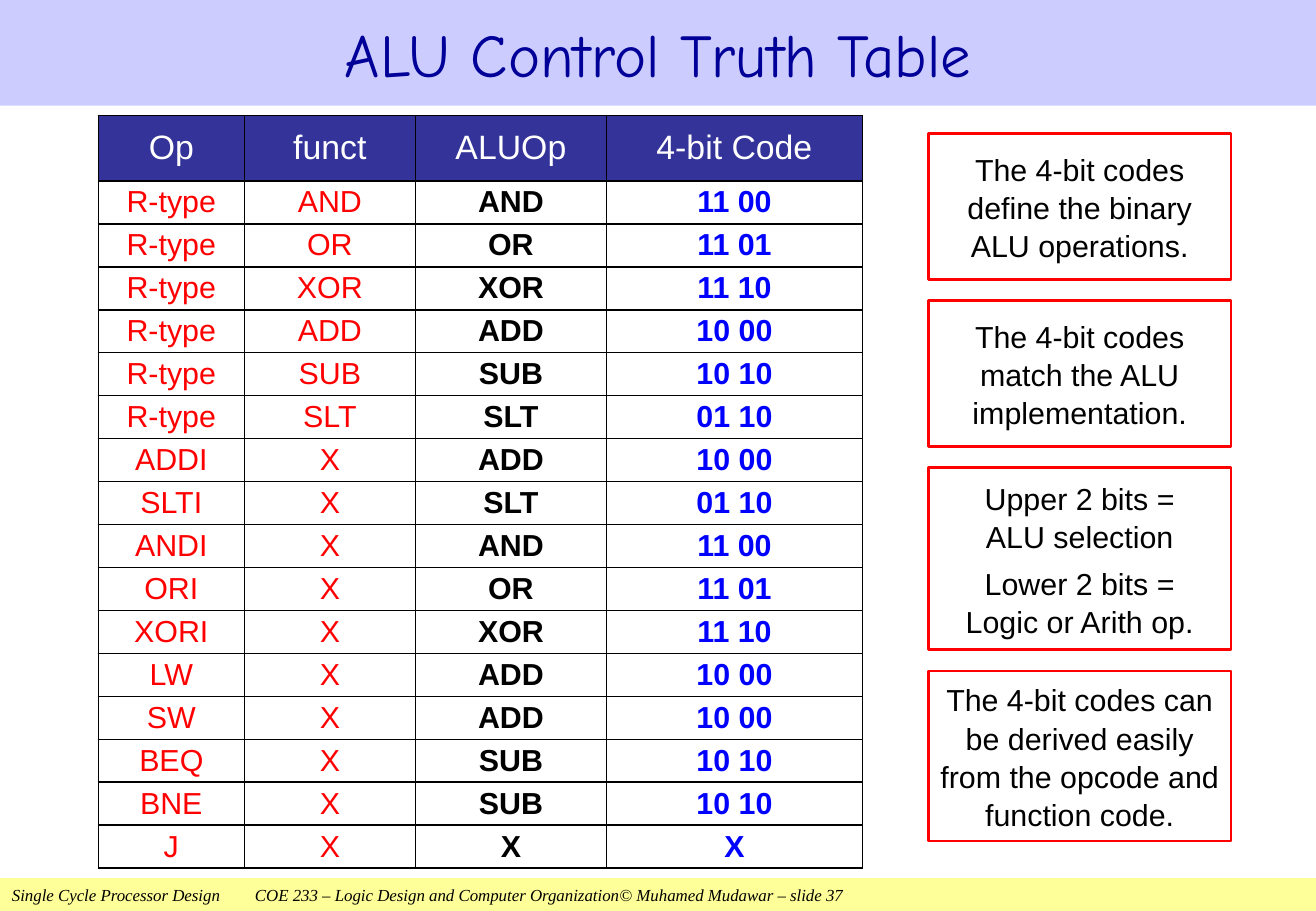
from lxml import etree
from pptx import Presentation
from pptx.dml.color import RGBColor
from pptx.enum.shapes import MSO_SHAPE
from pptx.enum.text import MSO_ANCHOR, MSO_AUTO_SIZE, PP_ALIGN
from pptx.oxml.ns import qn
from pptx.util import Inches, Pt

RECTANGLE = MSO_SHAPE.RECTANGLE
MIDDLE = MSO_ANCHOR.MIDDLE
NO_AUTOFIT = MSO_AUTO_SIZE.NONE
CENTER, LEFT = PP_ALIGN.CENTER, PP_ALIGN.LEFT

COLUMNS, ROWS = 108.3, 75
COLORS = {
    "title band": "CCCCFF",
    "title": "000099",
    "footer band": "FFFF99",
    "header": "333399",
    "white": "FFFFFF",
    "black": "000000",
    "red": "FF0000",
    "blue": "0000FF",
}

HEADINGS = ("Op", "funct", "ALUOp", "4-bit Code")
COLUMN_WIDTHS = (12, 14.1, 15.7, 21.1)
CODES = {
    "AND": "11 00",
    "OR": "11 01",
    "XOR": "11 10",
    "ADD": "10 00",
    "SUB": "10 10",
    "SLT": "01 10",
    "X": "X",
}
R_TYPE_FUNCTIONS = ("AND", "OR", "XOR", "ADD", "SUB", "SLT")
OTHER_OPERATIONS = {
    "ADDI": "ADD",
    "SLTI": "SLT",
    "ANDI": "AND",
    "ORI": "OR",
    "XORI": "XOR",
    "LW": "ADD",
    "SW": "ADD",
    "BEQ": "SUB",
    "BNE": "SUB",
    "J": "X",
}
NOTES = (
    (12, ("The 4-bit codes define the binary ALU operations.",)),
    (12, ("The 4-bit codes match the ALU implementation.",)),
    (15, ("Upper 2 bits =", "ALU selection", "Lower 2 bits =", "Logic or Arith op.")),
    (14, ("The 4-bit codes can be derived easily from the opcode and function code.",)),
)
NOTE_GAP = 1.75
FOOTER = (
    "Single Cycle Processor Design",
    "COE 233 – Logic Design and Computer Organization",
    "© Muhamed Mudawar – slide 37",
)


def color(name):
    return RGBColor.from_string(COLORS[name])


class SlideBuilder:
    def __init__(self, presentation):
        self.column = presentation.slide_width / COLUMNS
        self.row = presentation.slide_height / ROWS
        self.slide = presentation.slides.add_slide(presentation.slide_layouts[5])

    def box(self, left, top, width, height):
        return (
            round(left * self.column),
            round(top * self.row),
            round(width * self.column),
            round(height * self.row),
        )

    def style(self, paragraph, size, name, font="Arial", bold=False, italic=False,
              alignment=CENTER):
        paragraph.alignment = alignment
        paragraph.font.size = Pt(size)
        paragraph.font.name = font
        paragraph.font.bold = bold
        paragraph.font.italic = italic
        paragraph.font.color.rgb = color(name)

    def title(self, text, height):
        shape = self.slide.shapes.title
        shape.left, shape.top, shape.width, shape.height = self.box(0, 0, COLUMNS, height)
        shape.fill.solid()
        shape.fill.fore_color.rgb = color("title band")
        frame = shape.text_frame
        frame.text = text
        frame.auto_size = NO_AUTOFIT
        frame.vertical_anchor = MIDDLE
        self.style(frame.paragraphs[0], 36, "title", "Comic Neue")

    def rectangle(self, left, top, width, height, lines):
        shape = self.slide.shapes.add_shape(RECTANGLE, *self.box(left, top, width, height))
        shape.shadow.inherit = False
        frame = shape.text_frame
        frame.text = "\n".join(lines)
        frame.word_wrap = True
        frame.vertical_anchor = MIDDLE
        frame.margin_top = frame.margin_bottom = 0
        return shape

    def footer(self, parts, top):
        shape = self.rectangle(0, top, COLUMNS, ROWS - top, ["\t".join(parts)])
        shape.fill.solid()
        shape.fill.fore_color.rgb = color("footer band")
        shape.line.fill.background()
        self.style(shape.text_frame.paragraphs[0], 10, "black", "Times New Roman",
                   italic=True, alignment=LEFT)

    def note(self, left, top, width, height, lines):
        shape = self.rectangle(left, top, width, height, lines)
        shape.fill.background()
        shape.line.color.rgb = color("red")
        shape.line.width = Pt(1.5)
        frame = shape.text_frame
        frame.margin_left = frame.margin_right = Inches(0.08)
        for index, paragraph in enumerate(frame.paragraphs):
            self.style(paragraph, 18, "black")
            paragraph.line_spacing = 1.05
            paragraph.space_before = Pt(5 if index == 2 else 0)

    def border(self, cell):
        properties = cell._tc.get_or_add_tcPr()
        for side in ("a:lnL", "a:lnR", "a:lnT", "a:lnB"):
            line = etree.SubElement(properties, qn(side), w=str(Pt(1)))
            fill = etree.SubElement(line, qn("a:solidFill"))
            etree.SubElement(fill, qn("a:srgbClr"), val=COLORS["black"])

    def cell(self, cell, text, size, name, bold):
        cell.text = text
        cell.vertical_anchor = MIDDLE
        cell.margin_left = cell.margin_right = Inches(0.03)
        cell.margin_top = cell.margin_bottom = Inches(0.02)
        self.style(cell.text_frame.paragraphs[0], size, name, bold=bold)
        self.border(cell)

    def table(self, left, top, height, header_height, records):
        box = self.box(left, top, sum(COLUMN_WIDTHS), height)
        table = self.slide.shapes.add_table(len(records) + 1, len(HEADINGS), *box).table
        table.first_row = table.horz_banding = False
        for column, width in zip(table.columns, COLUMN_WIDTHS):
            column.width = round(width * self.column)
        body_height = (height - header_height) / len(records)
        for index, row in enumerate(table.rows):
            row.height = round((body_height if index else header_height) * self.row)
        for index, heading in enumerate(HEADINGS):
            cell = table.cell(0, index)
            self.cell(cell, heading, 20, "white", False)
            cell.fill.solid()
            cell.fill.fore_color.rgb = color("header")
        styles = (("red", False), ("red", False), ("black", True), ("blue", True))
        for row, record in enumerate(records, 1):
            for index, (text, (name, bold)) in enumerate(zip(record, styles)):
                cell = table.cell(row, index)
                self.cell(cell, text, 18, name, bold)
                cell.fill.background()


def main():
    presentation = Presentation()
    presentation.slide_width = Inches(10.83)
    presentation.slide_height = Inches(7.5)
    builder = SlideBuilder(presentation)
    builder.title("ALU Control Truth Table", 8.7)
    builder.footer(FOOTER, 72.3)
    records = [("R-type", name, name, CODES[name]) for name in R_TYPE_FUNCTIONS]
    records += [(op, "X", name, CODES[name]) for op, name in OTHER_OPERATIONS.items()]
    builder.table(8.1, 9.5, 62, 5.4, records)
    top = 11
    for height, lines in NOTES:
        builder.note(76.4, top, 24.9, height, lines)
        top += height + NOTE_GAP
    presentation.save("out.pptx")


if __name__ == "__main__":
    main()
